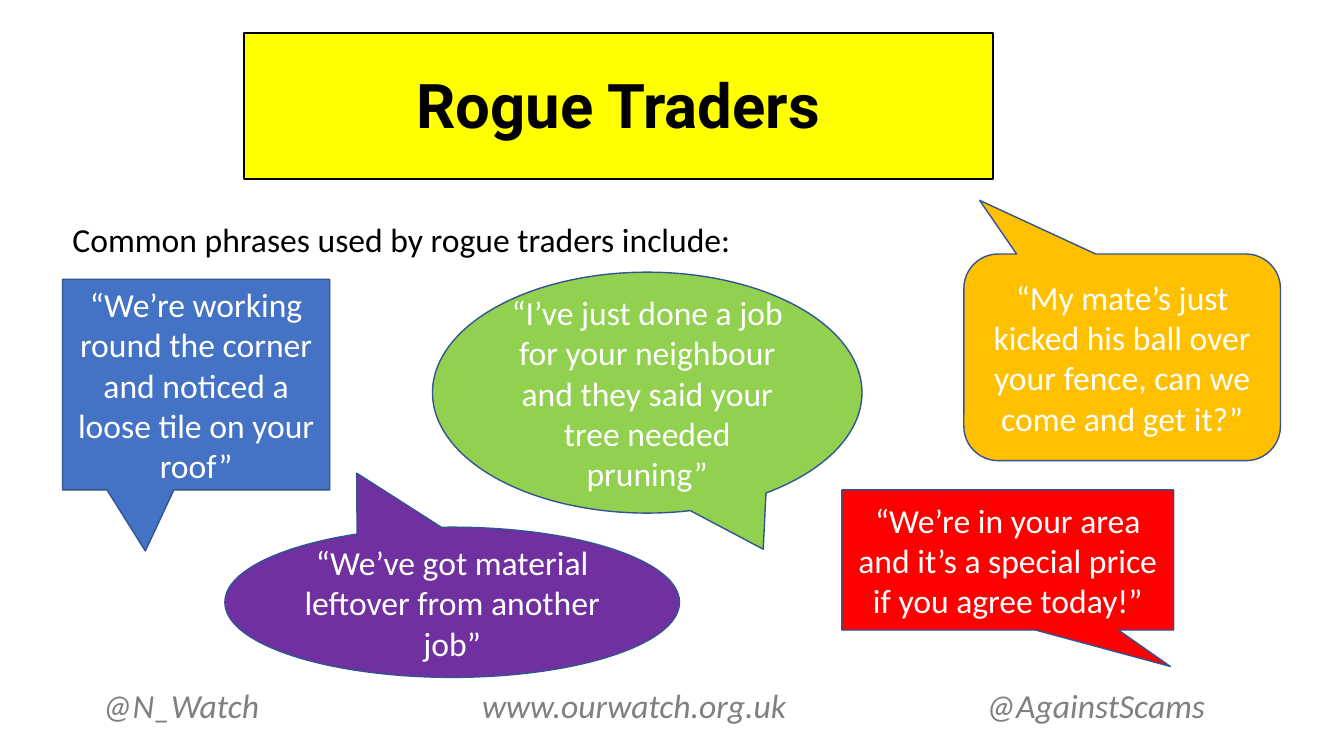
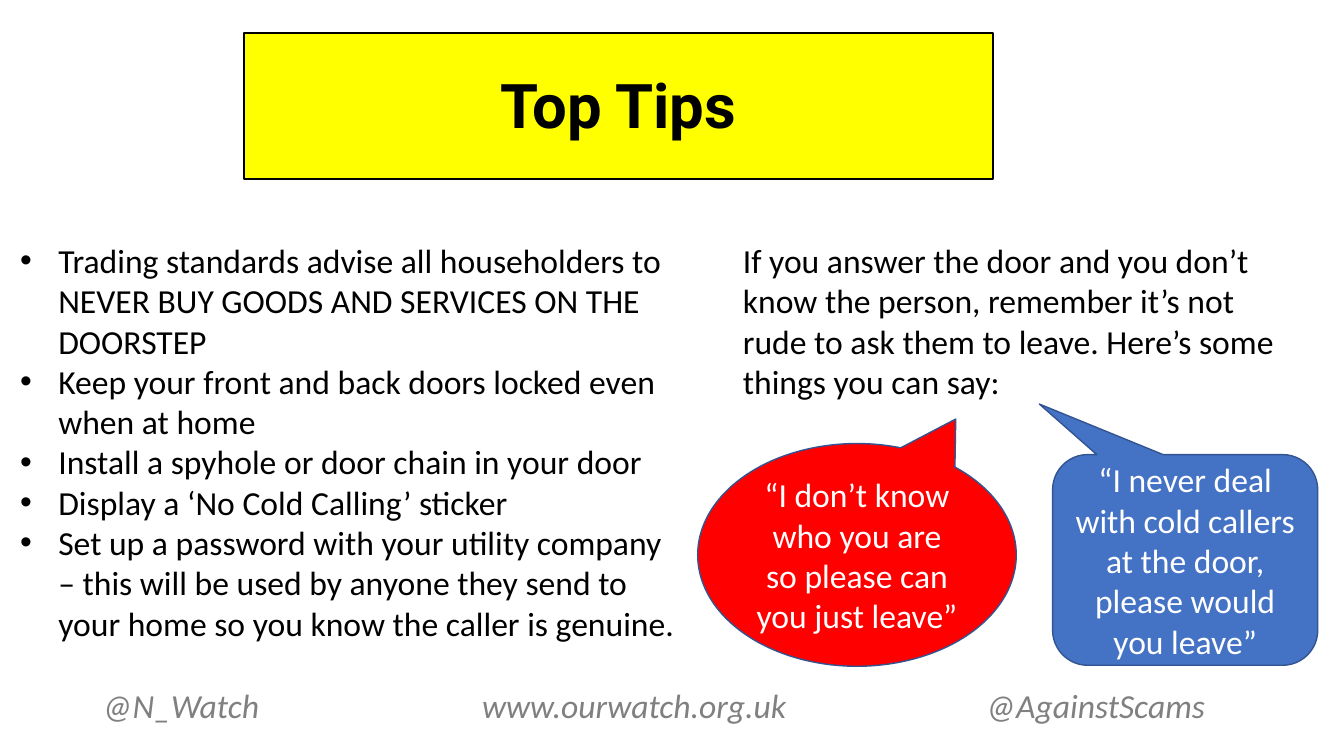
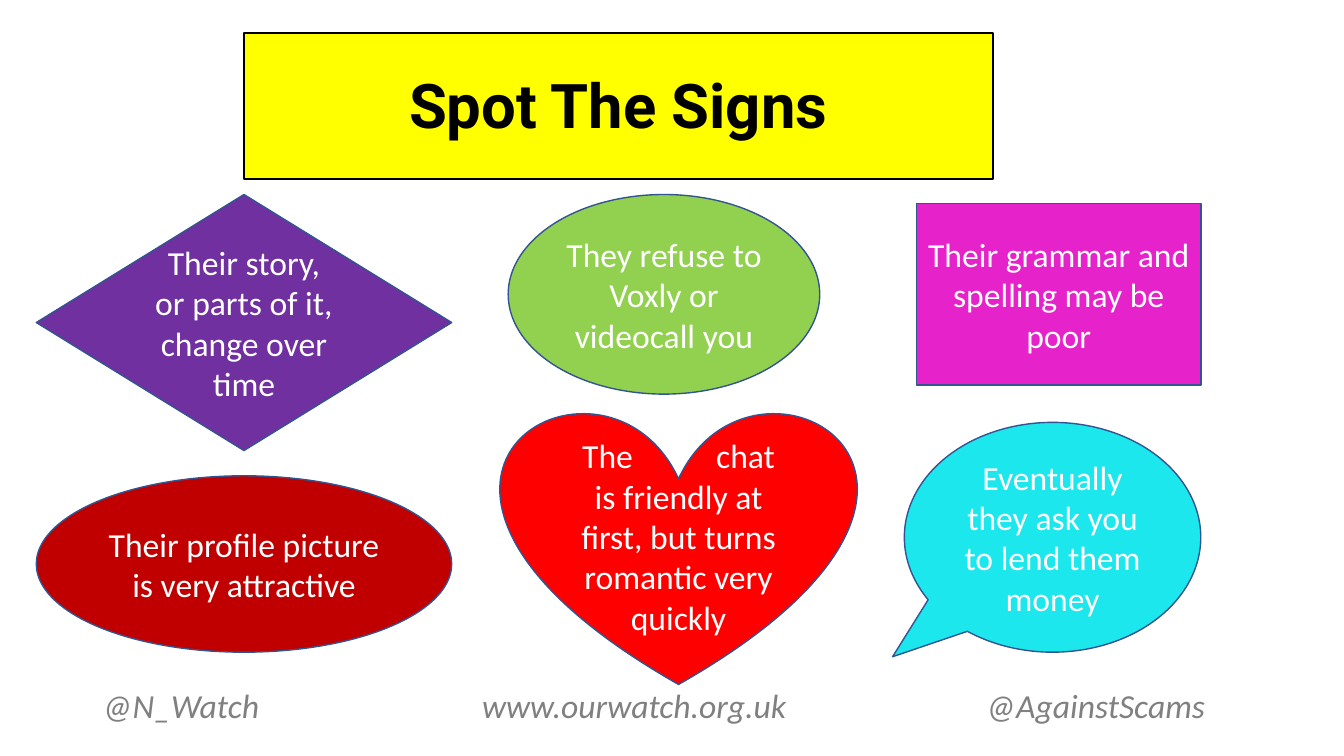
from lxml import etree
from pptx import Presentation
from pptx.dml.color import RGBColor
from pptx.enum.shapes import MSO_SHAPE as Shape
from pptx.enum.text import MSO_ANCHOR as Anchor, PP_ALIGN as Align
from pptx.oxml.ns import qn
from pptx.util import Inches, Pt

BLACK = RGBColor(0x00, 0x00, 0x00)
WHITE = RGBColor(0xFF, 0xFF, 0xFF)
GREY = RGBColor(0x80, 0x80, 0x80)
YELLOW = RGBColor(0xFF, 0xFF, 0x00)
BLUE = RGBColor(0x44, 0x72, 0xC4)
OUTLINE = RGBColor(0x32, 0x54, 0x91)
RED = RGBColor(0xFF, 0x00, 0x00)
DARK_RED = RGBColor(0xC0, 0x00, 0x00)
GREEN = RGBColor(0x92, 0xD0, 0x50)
PURPLE = RGBColor(0x70, 0x30, 0xA0)
AMBER = RGBColor(0xFF, 0xC0, 0x00)
MAGENTA = RGBColor(0xE6, 0x22, 0xCA)
CYAN = RGBColor(0x1C, 0xE7, 0xEC)

BANNER = (2.42, 0.33, 7.43, 1.45)
FOOTERS = [
    ("@N_Watch", (0.92, 6.79, 3, 0.4), Align.LEFT),
    ("www.ourwatch.org.uk", (4.04, 6.79, 4.5, 0.4), Align.CENTER),
    ("@AgainstScams", (9.05, 6.79, 3, 0.4), Align.RIGHT),
]
HEART_GAP = 54  # points added to the space that straddles the heart's notch

# Each slide: title, text boxes (place, bulleted, paragraphs),
# bubbles (shape, place, adjustments, fill, text)
SLIDES = [
    ("Rogue Traders",
     [((0.62, 2.12, 12.07, 0.5), False,
       ["Common phrases used by rogue traders include:"])],
     [(Shape.RECTANGULAR_CALLOUT, (0.62, 2.77, 2.65, 2.09), (-0.19, 0.79), BLUE,
       "“We’re working round the corner and noticed a loose tile on your roof”"),
      (Shape.RECTANGULAR_CALLOUT, (8.35, 4.86, 3.29, 1.39), (0.49, 0.76), RED,
       "“We’re in your area and it’s a special price if you agree today!”"),
      (Shape.OVAL_CALLOUT, (4.29, 2.7, 4.26, 2.39), (0.27, 0.65), GREEN,
       "“I’ve just done a job for your neighbour and they said your tree needed pruning”"),
      (Shape.OVAL_CALLOUT, (2.23, 5.23, 4.51, 1.49), (-0.21, -0.86), PURPLE,
       "“We’ve got material leftover from another job”"),
      (Shape.ROUNDED_RECTANGULAR_CALLOUT, (9.56, 2.52, 3.14, 2.05), (-0.45, -0.76), AMBER,
       "“My mate’s just kicked his ball over your fence, can we come and get it?”")]),
    ("Top Tips",
     [((0.1, 2.33, 6.78, 4.14), True,
       ["Trading standards advise all householders to NEVER BUY GOODS AND SERVICES ON THE DOORSTEP",
        "Keep your front and back doors locked even when at home",
        "Install a spyhole or door chain in your door",
        "Display a ‘No Cold Calling’ sticker",
        "Set up a password with your utility company – this will be used by anyone they send to "
        "your home so you know the caller is genuine."]),
      ((7.27, 2.33, 5.7, 1.72), False,
       ["If you answer the door and you don’t know the person, remember it’s not rude to ask "
        "them to leave. Here’s some things you can say:"])],
     [(Shape.ROUNDED_RECTANGULAR_CALLOUT, (10.44, 4.51, 2.63, 2.09), (-0.55, -0.74), BLUE,
       "“I never deal with cold callers at the door, please would you leave”"),
      (Shape.OVAL_CALLOUT, (6.92, 4.4, 3.16, 2.21), (0.31, -0.61), RED,
       "“I don’t know who you are so please can you just leave”")]),
    ("Spot The Signs",
     [],
     [(Shape.OVAL, (0.36, 4.72, 4.12, 1.75), (), DARK_RED,
       "Their profile picture is very attractive"),
      (Shape.DIAMOND, (0.36, 1.93, 4.12, 2.54), (), PURPLE,
       "Their story, or parts of it, change over time"),
      (Shape.HEART, (4.97, 4.07, 3.52, 2.72), (), RED,
       "The chat is friendly at first, but turns romantic very quickly"),
      (Shape.RECTANGLE, (9.09, 2.02, 2.82, 1.8), (), MAGENTA,
       "Their grammar and spelling may be poor"),
      (Shape.OVAL, (5.04, 1.93, 3.09, 1.98), (), GREEN,
       "They refuse to Voxly or videocall you"),
      (Shape.OVAL_CALLOUT, (8.97, 4.19, 2.94, 2.28), (-0.54, 0.52), CYAN,
       "Eventually they ask you to lend them money")]),
]


def write(box, lines, color, align=Align.LEFT, anchor=Anchor.MIDDLE, bulleted=False):
    """Fill a box with 24 pt Calibri paragraphs and return the paragraphs."""
    frame = box.text_frame
    frame.word_wrap = True
    frame.vertical_anchor = anchor
    frame.text = "\n".join(lines)
    for para in frame.paragraphs:
        if bulleted:
            properties = para._p.get_or_add_pPr()
            properties.set("marL", str(Inches(0.38)))
            properties.set("indent", str(-Inches(0.38)))
            etree.SubElement(properties, qn("a:buFont")).set("typeface", "Arial")
            etree.SubElement(properties, qn("a:buChar")).set("char", "•")
        para.alignment = align
        para.font.name = "Calibri"
        para.font.size = Pt(24)
        para.font.color.rgb = color
    return frame.paragraphs


def add_figure(page, kind, place, fill, line, width):
    figure = page.shapes.add_shape(kind, *map(Inches, place))
    figure.shadow.inherit = False
    figure.fill.solid()
    figure.fill.fore_color.rgb = fill
    figure.line.color.rgb = line
    figure.line.width = Pt(width)
    return figure


deck = Presentation()
deck.slide_width = Inches(13.33)
deck.slide_height = Inches(7.5)

for title, texts, bubbles in SLIDES:
    page = deck.slides.add_slide(deck.slide_layouts[6])

    banner = add_figure(page, Shape.RECTANGLE, BANNER, YELLOW, BLACK, 1.5)
    banner.text_frame.margin_bottom = Inches(0.1)
    heading = write(banner, [title], BLACK, Align.CENTER)[0]
    heading.font.name = "Roboto"
    heading.font.size = Pt(44)
    heading.font.bold = True

    for label, place, align in FOOTERS:
        footer = page.shapes.add_textbox(*map(Inches, place))
        write(footer, [label], GREY, align)[0].font.italic = True

    for place, bulleted, lines in texts:
        box = page.shapes.add_textbox(*map(Inches, place))
        write(box, lines, BLACK, anchor=Anchor.TOP, bulleted=bulleted)

    for kind, place, adjustments, fill, words in bubbles:
        bubble = add_figure(page, kind, place, fill, OUTLINE, 1)
        for index, value in enumerate(adjustments):
            bubble.adjustments[index] = value
        para = write(bubble, [words], WHITE, Align.CENTER)[0]
        if kind == Shape.HEART:
            first, rest = words.split(" ", 1)
            para.runs[0].text = first
            gap = para.add_run()
            gap.text = " "
            gap.font._element.set("spc", str(HEART_GAP * 100))
            para.add_run().text = rest

deck.save("out.pptx")
